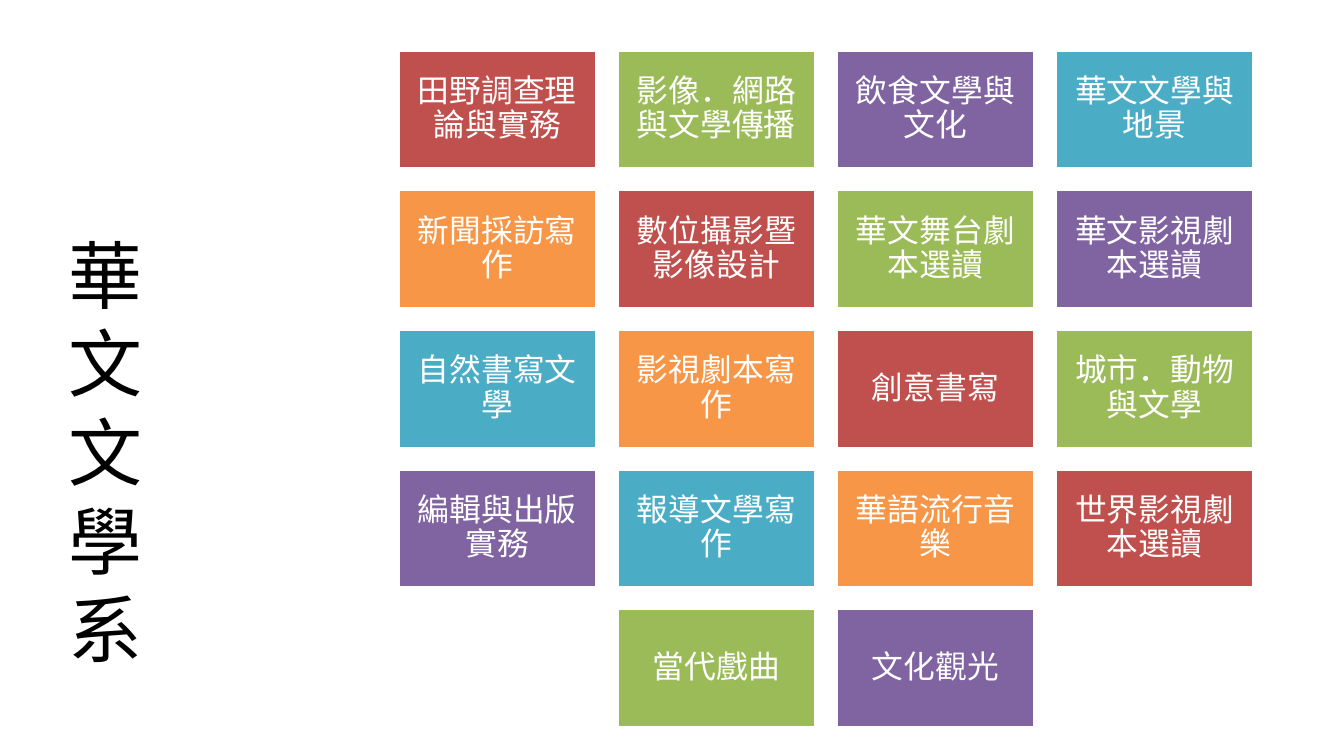
from dataclasses import dataclass

from lxml import etree
from pptx import Presentation
from pptx.dml.color import RGBColor
from pptx.enum.shapes import MSO_SHAPE
from pptx.enum.text import MSO_ANCHOR, MSO_AUTO_SIZE, PP_ALIGN
from pptx.oxml.ns import qn
from pptx.util import Cm, Pt

RECTANGLE = MSO_SHAPE.RECTANGLE
MIDDLE = MSO_ANCHOR.MIDDLE
CENTER = PP_ALIGN.CENTER
NO_AUTOFIT = MSO_AUTO_SIZE.NONE


@dataclass(frozen=True)
class Theme:
    title_font: str = "TeX Gyre Bonum"
    body_font: str = "Calibri"
    title_size: float = 39.6
    body_size: float = 17
    black: str = "000000"
    white: str = "FFFFFF"
    accents: tuple = ("C0504D", "9BBB59", "8064A2", "4BACC6", "F79646")


THEME = Theme()

COURSES = [
    "田野調查理論與實務", "影像．網路與文學傳播", "飲食文學與文化", "華文文學與地景",
    "新聞採訪寫作", "數位攝影暨影像設計", "華文舞台劇本選讀", "華文影視劇本選讀",
    "自然書寫文學", "影視劇本寫作", "創意書寫", "城市．動物與文學",
    "編輯與出版實務", "報導文學寫作", "華語流行音樂", "世界影視劇本選讀",
    "當代戲曲", "文化觀光",
]

# Course grid
COLUMNS = 4
GRID_LEFT, GRID_TOP = 7.52, 0.94
TILE_WIDTH, TILE_HEIGHT = 3.76, 2.26
GAP = 0.38
INSET = Cm(0.18)


def write_text(frame, text, *, font, size, color, line_spacing=None):
    """Write one centred paragraph into a text frame."""
    frame.word_wrap = True
    frame.auto_size = NO_AUTOFIT
    frame.vertical_anchor = MIDDLE
    paragraph = frame.paragraphs[0]
    paragraph.alignment = CENTER
    paragraph.line_spacing = line_spacing
    run = paragraph.add_run()
    run.text = text
    run.font.name = font
    run.font.size = Pt(size)
    run.font.color.rgb = RGBColor.from_string(color)
    # East Asian characters take their own typeface element
    etree.SubElement(run.font._element, qn("a:ea")).set("typeface", font)


presentation = Presentation()
presentation.slide_width = Cm(25.4)
presentation.slide_height = Cm(14.29)
slide = presentation.slides.add_slide(presentation.slide_layouts[5])

# Vertical department title
title = slide.shapes.title
title.left, title.top = Cm(0.89), Cm(2.34)
title.width, title.height = Cm(2.21), Cm(12.37)
write_text(title.text_frame, "華文文學系", font=THEME.title_font,
           size=THEME.title_size, color=THEME.black)
title.element.txBody.find(qn("a:bodyPr")).set("vert", "wordArtVertRtl")

# Course tiles: colours cycle, and a short last row is centred
for index, course in enumerate(COURSES):
    row, column = divmod(index, COLUMNS)
    row_length = min(COLUMNS, len(COURSES) - row * COLUMNS)
    column += (COLUMNS - row_length) / 2
    tile = slide.shapes.add_shape(
        RECTANGLE,
        Cm(GRID_LEFT + column * (TILE_WIDTH + GAP)),
        Cm(GRID_TOP + row * (TILE_HEIGHT + GAP)),
        Cm(TILE_WIDTH), Cm(TILE_HEIGHT))
    tile.shadow.inherit = False
    tile.fill.solid()
    accent = THEME.accents[index % len(THEME.accents)]
    tile.fill.fore_color.rgb = RGBColor.from_string(accent)
    tile.line.color.rgb = RGBColor.from_string(THEME.white)
    tile.line.width = Pt(2)
    frame = tile.text_frame
    frame.margin_left = frame.margin_right = INSET
    frame.margin_top = frame.margin_bottom = INSET
    write_text(frame, course, font=THEME.body_font, size=THEME.body_size,
               color=THEME.white, line_spacing=0.9)

presentation.save("out.pptx")
